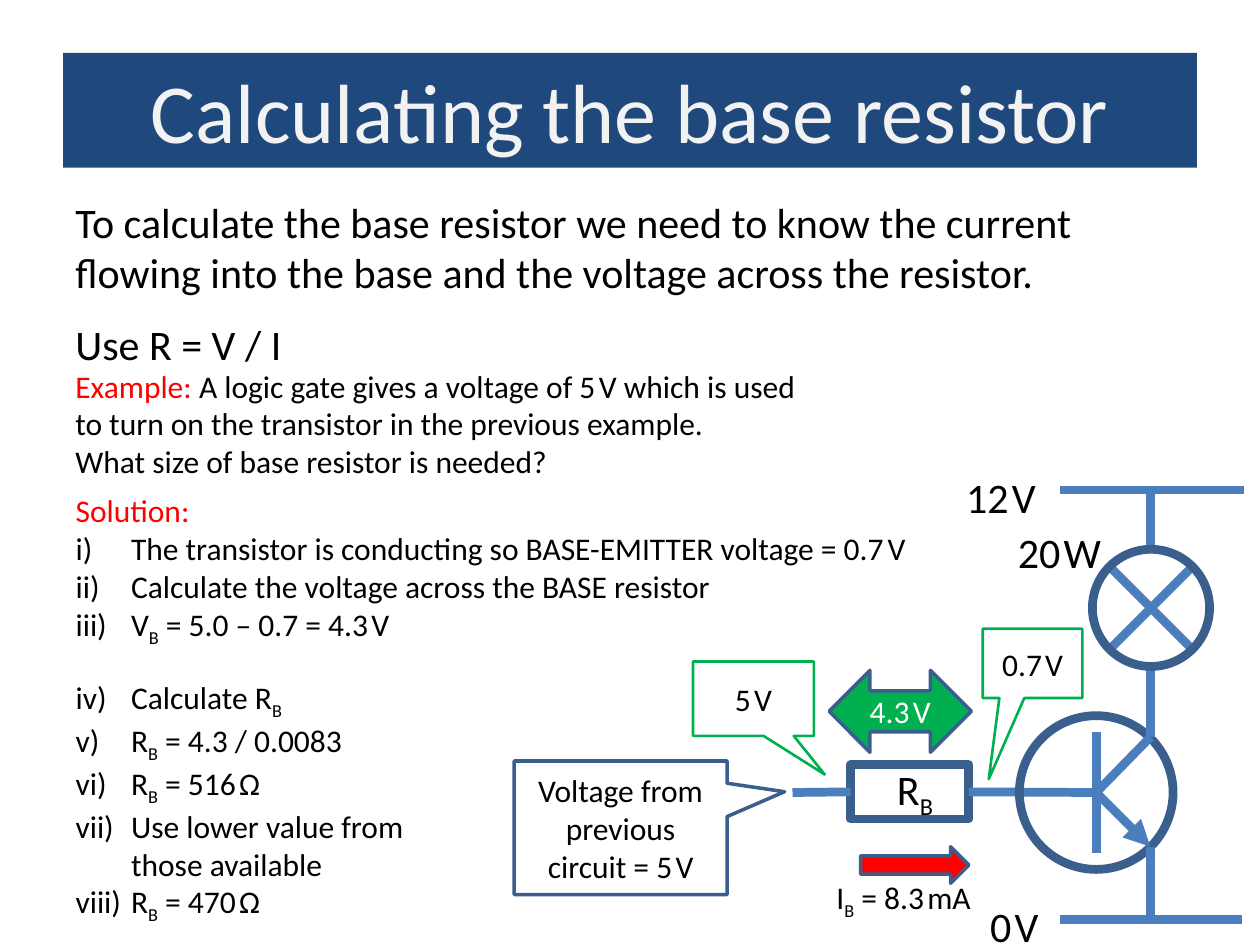
from dataclasses import dataclass

from lxml.etree import SubElement
from pptx import Presentation
from pptx.dml.color import RGBColor
from pptx.enum.shapes import MSO_CONNECTOR, MSO_SHAPE
from pptx.enum.text import MSO_ANCHOR, MSO_AUTO_SIZE, PP_ALIGN
from pptx.oxml.ns import qn
from pptx.util import Inches, Pt


@dataclass(frozen=True)
class Theme:
    font: str = "Calibri"
    title: int = 48
    large: int = 24
    body: int = 18
    gap: int = 8
    banner: str = "1F497D"
    pale: str = "F2F2F2"
    white: str = "FFFFFF"
    black: str = "000000"
    red: str = "FF0000"
    green: str = "00B050"
    wire: str = "4B7EBC"
    outline: str = "3A5F8C"
    heavy: float = 5
    medium: float = 2
    light: float = 1.5


THEME = Theme()
WIDTH, HEIGHT = Inches(10), Inches(7.5)
COLUMNS, ROWS = 100, 75
SUPPLY, GROUND, BASE = 38.9, 73, 62.9
BAR, COLLECTOR = 87, 91.3


def column(count):
    return round(WIDTH * count / COLUMNS)


def row(count):
    return round(HEIGHT * count / ROWS)


def box(left, top, width, height):
    return column(left), row(top), column(width), row(height)


def place(shape, area):
    shape.left, shape.top, shape.width, shape.height = box(*area)


def colour(value):
    return RGBColor.from_string(value)


def add_runs(paragraph, markup, size, ink):
    for piece in markup.replace("_B", "|_B|").replace("~", "|~|").split("|"):
        if not piece:
            continue
        run = paragraph.add_run()
        run.text = {"_B": "B", "~": " "}.get(piece, piece)
        run.font.name = THEME.font
        run.font.size = Pt(THEME.gap if piece == "~" else size)
        run.font.color.rgb = colour(ink)
        if piece == "_B":
            run.font._element.set("baseline", "-25000")


def write(shape, paragraphs, size=THEME.body, ink=THEME.black, align=PP_ALIGN.LEFT, after=0):
    frame = shape.text_frame
    for index, content in enumerate(paragraphs):
        paragraph = frame.add_paragraph() if index else frame.paragraphs[0]
        paragraph.alignment = align
        paragraph.space_before, paragraph.space_after = Pt(0), Pt(after)
        parts = [(content, ink)] if isinstance(content, str) else content
        for markup, part_ink in parts:
            add_runs(paragraph, markup, size, part_ink)


def add_text(slide, area, paragraphs, size=THEME.body, wrap=False, after=0):
    shape = slide.shapes.add_textbox(*box(*area))
    shape.text_frame.word_wrap = wrap
    write(shape, paragraphs, size, after=after)


def fill_list(shape, area, items, start=1, heading=None):
    place(shape, area)
    shape.text_frame.auto_size = MSO_AUTO_SIZE.NONE
    headings = [[(heading, THEME.red)]] if heading else []
    write(shape, headings + items)
    for index, paragraph in enumerate(shape.text_frame.paragraphs):
        properties = paragraph._p.get_or_add_pPr()
        numbered = index >= len(headings)
        indent = column(4.4) if numbered else 0
        properties.set("marL", str(indent))
        properties.set("indent", str(-indent))
        if numbered:
            SubElement(properties, qn("a:buFont"), typeface="+mj-lt")
            SubElement(properties, qn("a:buAutoNum"), type="romanLcParenR", startAt=str(start))
        else:
            SubElement(properties, qn("a:buNone"))


def add_shape(slide, kind, area, weight, line=THEME.outline, fill=None,
              text=None, ink=THEME.black, pointer=()):
    shape = slide.shapes.add_shape(kind, *box(*area))
    shape.shadow.inherit = False
    if fill:
        shape.fill.solid()
        shape.fill.fore_color.rgb = colour(fill)
    else:
        shape.fill.background()
    shape.line.color.rgb = colour(line)
    shape.line.width = Pt(weight)
    for index, value in enumerate(pointer):
        shape.adjustments[index] = value
    if text:
        shape.text_frame.word_wrap = True
        shape.text_frame.vertical_anchor = MSO_ANCHOR.MIDDLE
        write(shape, [text], ink=ink, align=PP_ALIGN.CENTER)
    return shape


def add_wire(slide, start, end, arrow=False):
    wire = slide.shapes.add_connector(
        MSO_CONNECTOR.STRAIGHT, column(start[0]), row(start[1]), column(end[0]), row(end[1]))
    wire.line.color.rgb = colour(THEME.wire)
    wire.line.width = Pt(THEME.heavy)
    if arrow:
        SubElement(wire.line._get_or_add_ln(), qn("a:tailEnd"), type="triangle")
    SubElement(wire._element.spPr, qn("a:effectLst"))
    return wire


def add_title(slide):
    title = slide.shapes.title
    place(title, (5, 4.2, 90, 9.1))
    title.fill.solid()
    title.fill.fore_color.rgb = colour(THEME.banner)
    title.text_frame.auto_size = MSO_AUTO_SIZE.NONE
    title.text_frame.vertical_anchor = MSO_ANCHOR.MIDDLE
    write(title, ["Calculating the base resistor"], THEME.title, THEME.pale, PP_ALIGN.CENTER)


def add_circuit(slide):
    resistor = add_shape(slide, MSO_SHAPE.RECTANGLE, (67.5, 60.7, 9.4, 4.3), THEME.heavy)
    add_wire(slide, (67.5, BASE), (62.9, BASE)).begin_connect(resistor, 1)
    add_wire(slide, (76.9, BASE), (BAR, BASE)).begin_connect(resistor, 3)
    for start, end in [
        ((88.1, 45), (94.6, 51.5)),
        ((94.6, 45), (88.1, 51.5)),
        ((BAR, 58.1), (BAR, 67.7)),
    ]:
        add_wire(slide, start, end)
    add_shape(slide, MSO_SHAPE.OVAL, (80.9, 56.8, 12.2, 12.2), THEME.heavy)
    add_wire(slide, (BAR, BASE), (COLLECTOR, 67.2), arrow=True)
    for start, end in [
        ((BAR, BASE), (COLLECTOR, 58.5)),
        ((COLLECTOR, 58.5), (COLLECTOR, 52.8)),
        ((COLLECTOR, 67.2), (COLLECTOR, GROUND)),
        ((COLLECTOR, 43.6), (COLLECTOR, SUPPLY)),
        ((84.1, SUPPLY), (98.7, SUPPLY)),
        ((84.1, GROUND), (98.6, GROUND)),
    ]:
        add_wire(slide, start, end)
    add_shape(slide, MSO_SHAPE.OVAL, (86.7, 43.6, 9.3, 9.3), THEME.heavy)
    for area, text in [
        ((75.7, 36.9, 7.6, 5), "12~V"),
        ((77.6, 71, 5.9, 5), "0~V"),
        ((70.2, 60.1, 5.1, 5), "R_B"),
        ((79.8, 41.3, 8.7, 5), "20~W"),
    ]:
        add_text(slide, area, [text], THEME.large)


def add_readings(slide):
    add_shape(slide, MSO_SHAPE.RIGHT_ARROW, (68.3, 67.2, 8.6, 2.9), THEME.medium, fill=THEME.red)
    add_text(slide, (65.4, 69.2, 13.2, 4), ["I_B = 8.3~mA"])
    add_shape(slide, MSO_SHAPE.LEFT_RIGHT_ARROW, (65.8, 53.2, 11.3, 6.5), THEME.medium,
              fill=THEME.green, text="4.3~V", ink=THEME.white)
    for area, weight, line, text, pointer in [
        ((40.8, 60.4, 16.9, 10.6), THEME.medium, THEME.outline,
         "Voltage from previous circuit = 5~V", (0.77, -0.27)),
        ((55, 52.5, 9.6, 5.9), THEME.light, THEME.green, "5~V", (0.59, 1.02)),
        ((78, 49.9, 7.9, 5.5), THEME.light, THEME.green, "0.7~V", (-0.44, 1.67)),
    ]:
        add_shape(slide, MSO_SHAPE.RECTANGULAR_CALLOUT, area, weight, line,
                  text=text, pointer=pointer)


def main():
    presentation = Presentation()
    presentation.slide_width, presentation.slide_height = WIDTH, HEIGHT
    slide = presentation.slides.add_slide(presentation.slide_layouts.get_by_name("Two Content"))
    add_title(slide)
    add_text(slide, (5, 15.1, 90, 14), [
        "To calculate the base resistor we need to know the current flowing into the base "
        "and the voltage across the resistor.",
        "Use R = V / I",
    ], THEME.large, wrap=True, after=12)
    add_circuit(slide)
    add_readings(slide)
    add_text(slide, (5, 28.6, 59.6, 10.1), [
        [("Example: ", THEME.red),
         ("A logic gate gives a voltage of 5~V which is used to turn on the transistor "
          "in the previous example.", THEME.black)],
        "What size of base resistor is needed?",
    ], wrap=True)
    fill_list(slide.placeholders[1], (5, 38.5, 75.5, 13.1), [
        "The transistor is conducting so BASE-EMITTER voltage = 0.7~V",
        "Calculate the voltage across the BASE resistor",
        "V_B = 5.0 – 0.7 = 4.3~V",
    ], heading="Solution:")
    fill_list(slide.placeholders[2], (5, 53.3, 34.2, 19.2), [
        "Calculate R_B",
        "R_B = 4.3 / 0.0083",
        "R_B = 516~Ω",
        "Use lower value from those available",
        "R_B = 470~Ω",
    ], start=4)
    presentation.save("out.pptx")


if __name__ == "__main__":
    main()
